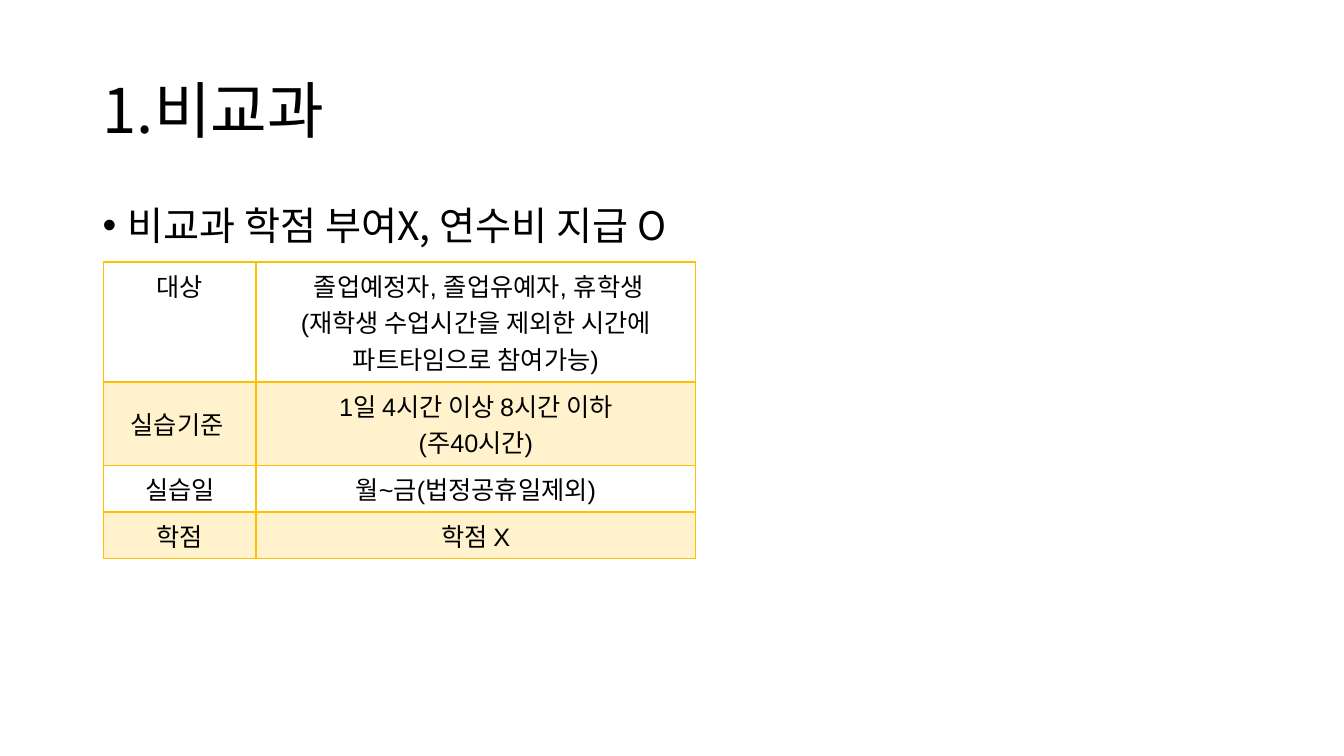
from lxml.etree import SubElement
from pptx import Presentation
from pptx.dml.color import RGBColor
from pptx.enum.text import MSO_ANCHOR as Anchor, PP_ALIGN as Align
from pptx.oxml.ns import qn
from pptx.util import Inches, Pt

BLACK = RGBColor(0x00, 0x00, 0x00)
GOLD = RGBColor(0xFF, 0xC0, 0x00)
PALE_GOLD = RGBColor(0xFF, 0xF2, 0xCC)
KOREAN_FONT = "Noto Sans CJK KR"
TABLE_FONT = "Arial"

COLUMN_WIDTHS = (1.51, 4.36)
ROW_HEIGHTS = (1.19, 0.83, 0.46, 0.46)
ROWS = (
    ("대상", " 졸업예정자, 졸업유예자, 휴학생\n(재학생 수업시간을 제외한 시간에 파트타임으로 참여가능)"),
    ("실습기준 ", "1일 4시간 이상 8시간 이하\n(주40시간)"),
    ("실습일", "월~금(법정공휴일제외)"),
    ("학점", "학점 X"),
)


def style_paragraph(paragraph, size, font):
    for run in paragraph.runs:
        run.font.size = Pt(size)
        run.font.bold = False
        run.font.color.rgb = BLACK
        run.font.name = font
        SubElement(run._r.get_or_add_rPr(), qn("a:ea"), typeface=KOREAN_FONT)


def add_text(slide, box, text, size, anchor):
    shape = slide.shapes.add_textbox(*(Inches(length) for length in box))
    text_frame = shape.text_frame
    text_frame.word_wrap = True
    text_frame.vertical_anchor = anchor
    text_frame.text = text
    paragraph = text_frame.paragraphs[0]
    paragraph.line_spacing = 0.9
    style_paragraph(paragraph, size, KOREAN_FONT)
    return paragraph


def add_title(slide, box):
    add_text(slide, box, "1.비교과", 44, Anchor.MIDDLE)


def add_bullet(slide, box):
    paragraph = add_text(slide, box, "비교과 학점 부여X, 연수비 지급 O", 28, Anchor.TOP)
    paragraph.space_before = Pt(10)
    properties = paragraph._p.get_or_add_pPr()
    properties.set("marL", str(Inches(0.25)))
    properties.set("indent", str(-Inches(0.25)))
    SubElement(properties, qn("a:buFont"), typeface="Arial")
    SubElement(properties, qn("a:buChar"), char="•")


def set_borders(cell, widths):
    properties = cell._tc.get_or_add_tcPr()
    for side, width in widths.items():
        line = SubElement(properties, qn(f"a:ln{side}"), w=str(Pt(width)))
        fill = SubElement(line, qn("a:solidFill"))
        SubElement(fill, qn("a:srgbClr"), val=str(GOLD))


def fill_cell(cell, text, row):
    cell.text_frame.text = text
    for paragraph in cell.text_frame.paragraphs:
        paragraph.alignment = Align.CENTER
        style_paragraph(paragraph, 18, TABLE_FONT)
    set_borders(cell, {"L": 1, "R": 1, "T": 2 if row == 1 else 1, "B": 2 if row == 0 else 1})
    if row % 2:
        cell.fill.solid()
        cell.fill.fore_color.rgb = PALE_GOLD
    else:
        cell.fill.background()


def add_conditions(slide, left, top):
    size = (sum(COLUMN_WIDTHS), sum(ROW_HEIGHTS))
    frame = slide.shapes.add_table(
        len(ROWS), len(COLUMN_WIDTHS), *(Inches(length) for length in (left, top, *size))
    )
    table = frame.table
    table.first_row = False
    table.horz_banding = False
    for column, width in zip(table.columns, COLUMN_WIDTHS):
        column.width = Inches(width)
    for row, height in zip(table.rows, ROW_HEIGHTS):
        row.height = Inches(height)
    for row, texts in enumerate(ROWS):
        for column, text in enumerate(texts):
            fill_cell(table.cell(row, column), text, row)
    table.cell(1, 0).vertical_anchor = Anchor.MIDDLE


def main():
    presentation = Presentation()
    presentation.slide_width = Inches(13.33)
    presentation.slide_height = Inches(7.5)
    slide = presentation.slides.add_slide(presentation.slide_layouts[6])
    add_title(slide, (0.92, 0.4, 11.5, 1.45))
    add_bullet(slide, (0.92, 2, 11.5, 4.76))
    add_conditions(slide, 1.03, 2.6)
    presentation.save("out.pptx")


if __name__ == "__main__":
    main()
